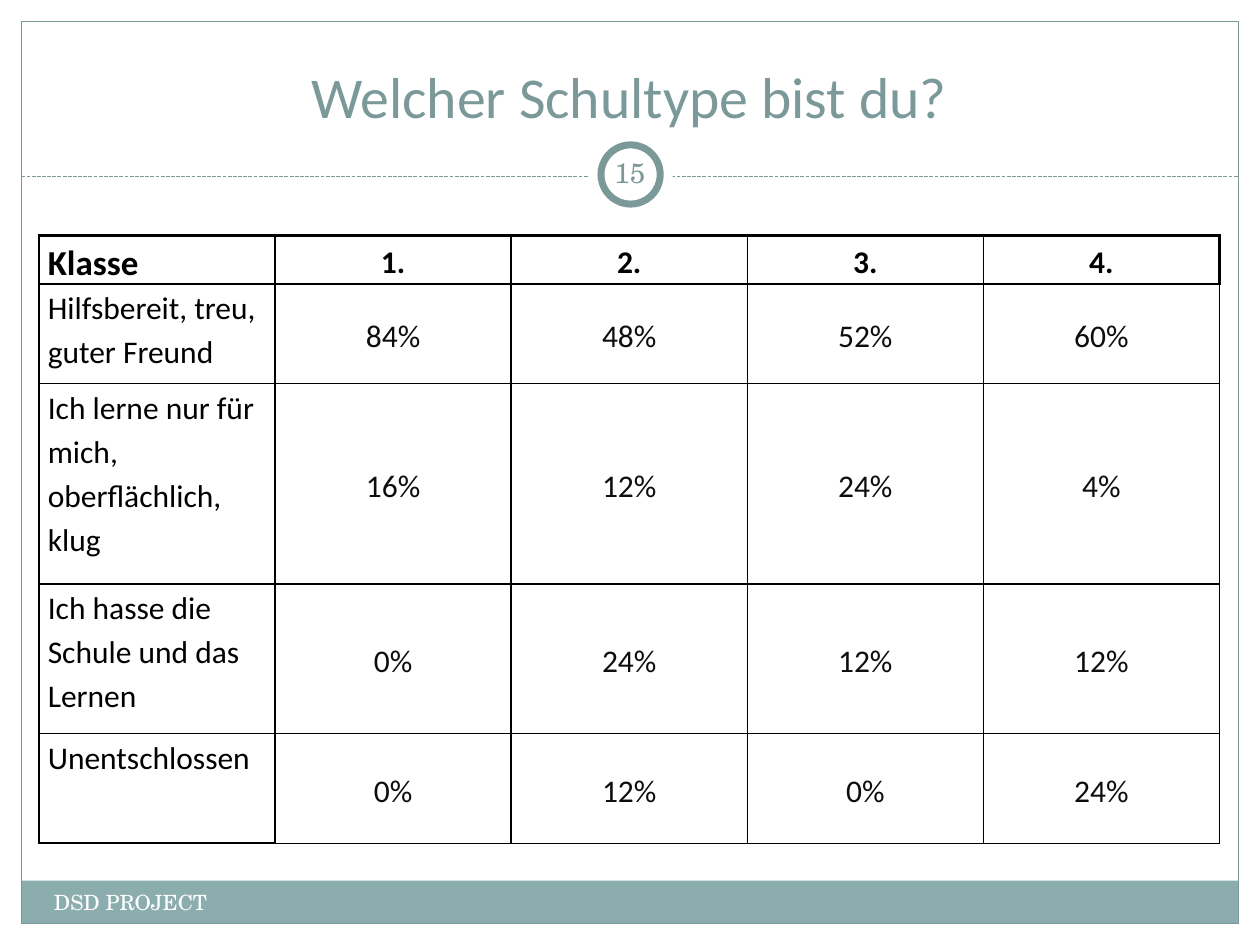
from lxml import etree
from pptx import Presentation
from pptx.dml.color import RGBColor
from pptx.enum.dml import MSO_LINE
from pptx.enum.shapes import MSO_CONNECTOR, MSO_SHAPE
from pptx.enum.text import MSO_ANCHOR, PP_ALIGN
from pptx.oxml.ns import qn
from pptx.util import Inches, Pt

SANS, SERIF = "Calibri", "TeX Gyre Schola"
TEAL, BAND, WHITE, BLACK, NEAR_BLACK = "7C999A", "8CADAE", "FFFFFF", "000000", "0D0D0D"
THIN, THICK = 1, 1.5

ROWS = [
    ["Klasse", "1.", "2.", "3.", "4."],
    ["Hilfsbereit, treu, guter Freund", "84%", "48%", "52%", "60%"],
    ["Ich lerne nur für mich, oberflächlich, klug", "16%", "12%", "24%", "4%"],
    ["Ich hasse die Schule und das Lernen", "0%", "24%", "12%", "12%"],
    ["Unentschlossen", "0%", "12%", "0%", "24%"],
]
ROW_HEIGHTS = [0.37, 0.79, 1.59, 1.19, 0.87]


def color(value):
    return RGBColor.from_string(value)


def format_text(tf, size, font, fill, align=PP_ALIGN.LEFT, bold=False):
    for p in tf.paragraphs:
        p.alignment = align
        for r in p.runs:
            r.font.size, r.font.name, r.font.bold = Pt(size), font, bold
            r.font.color.rgb = color(fill)


def add_text(s, box, text, size, font, fill, align=PP_ALIGN.LEFT,
             anchor=MSO_ANCHOR.TOP, inset=None):
    tf = s.shapes.add_textbox(*map(Inches, box)).text_frame
    tf.word_wrap = True
    tf.vertical_anchor = anchor
    if inset is not None:
        tf.margin_left = tf.margin_right = Inches(inset)
        tf.margin_top = tf.margin_bottom = Inches(inset)
    tf.text = text
    format_text(tf, size, font, fill, align)


def add_box(s, kind, box, fill=None, line=None, width=0.75):
    sp = s.shapes.add_shape(kind, *map(Inches, box))
    sp.shadow.inherit = False
    if fill:
        sp.fill.solid()
        sp.fill.fore_color.rgb = color(fill)
    else:
        sp.fill.background()
    if line:
        sp.line.color.rgb = color(line)
        sp.line.width = Pt(width)
    else:
        sp.line.fill.background()


def add_frame(s, box):
    """Footer band, outer border and dashed rule below the title."""
    left, top, width, height = box
    band = 0.34
    add_box(s, MSO_SHAPE.RECTANGLE, (left, top + height - band, width, band), BAND)
    add_box(s, MSO_SHAPE.RECTANGLE, box, line=TEAL)
    rule = s.shapes.add_connector(MSO_CONNECTOR.STRAIGHT, Inches(left), Inches(1.4),
                                  Inches(left + width), Inches(1.4))
    rule.line.color.rgb = color(TEAL)
    rule.line.width = Pt(0.75)
    rule.line.dash_style = MSO_LINE.SQUARE_DOT
    etree.SubElement(rule._element.spPr, qn("a:effectLst"))
    add_text(s, (0.33, 7.01, 3.92, 0.4), "DSD PROJECT", 12, SERIF, WHITE)


def add_page_badge(s, box, number):
    """White disc that interrupts the rule, ring and slide number."""
    left, top, size, _ = box
    gap = 0.1
    ring = size - 2 * gap
    add_box(s, MSO_SHAPE.OVAL, box, WHITE)
    add_box(s, MSO_SHAPE.OVAL, (left + gap, top + gap, ring, ring), WHITE, TEAL, 4)
    add_text(s, (left + 0.08, top + 0.08, 0.5, 0.48), number, 16, SERIF, TEAL,
             PP_ALIGN.CENTER, MSO_ANCHOR.MIDDLE, 0.05)


def set_borders(cell, widths):
    tcPr = cell._tc.get_or_add_tcPr()
    for index, (side, width) in enumerate(widths.items()):
        ln = etree.Element(qn(f"a:{side}"), w=str(Pt(width)))
        fill = etree.SubElement(ln, qn("a:solidFill"))
        etree.SubElement(fill, qn("a:srgbClr"), val=BLACK)
        tcPr.insert(index, ln)


def add_results_table(s, box):
    last = len(ROWS) - 1
    table = s.shapes.add_table(len(ROWS), len(ROWS[0]), *map(Inches, box)).table
    table.first_row = table.horz_banding = False
    for column in table.columns:
        column.width = Inches(box[2] / len(ROWS[0]))
    for i, (row, height) in enumerate(zip(ROWS, ROW_HEIGHTS)):
        table.rows[i].height = Inches(height)
        for j, text in enumerate(row):
            head, label = i == 0, j == 0
            cell = table.cell(i, j)
            cell.fill.background()
            cell.margin_left = cell.margin_right = Inches(0.07)
            cell.margin_top = cell.margin_bottom = 0
            cell.vertical_anchor = MSO_ANCHOR.TOP if label else MSO_ANCHOR.MIDDLE
            cell.text = text
            cell.text_frame.paragraphs[0].line_spacing = 1.15
            format_text(cell.text_frame, 20 if head and label else 18, SANS,
                        BLACK if head or label else NEAR_BLACK,
                        PP_ALIGN.LEFT if label else PP_ALIGN.CENTER, head)
            # Heavier lines around the header row and the label column
            set_borders(cell, {
                "lnL": THICK if j <= 1 else THIN,
                "lnR": THICK if label or (head and j == len(row) - 1) else THIN,
                "lnT": THICK if i <= 1 else THIN,
                "lnB": THICK if head or (label and i == last) else THIN,
            })


def main():
    prs = Presentation()
    prs.slide_width, prs.slide_height = Inches(10), Inches(7.5)
    s = prs.slides.add_slide(prs.slide_layouts[6])
    add_frame(s, (0.17, 0.17, 9.66, 7.16))
    add_page_badge(s, (4.67, 1.05, 0.67, 0.67), "15")
    add_text(s, (0.33, 0.25, 9.33, 0.83), "Welcher Schultype bist du?", 33, SANS, TEAL,
             PP_ALIGN.CENTER, MSO_ANCHOR.BOTTOM)
    add_results_table(s, (0.31, 1.87, 9.37, sum(ROW_HEIGHTS)))
    prs.save("out.pptx")


if __name__ == "__main__":
    main()
